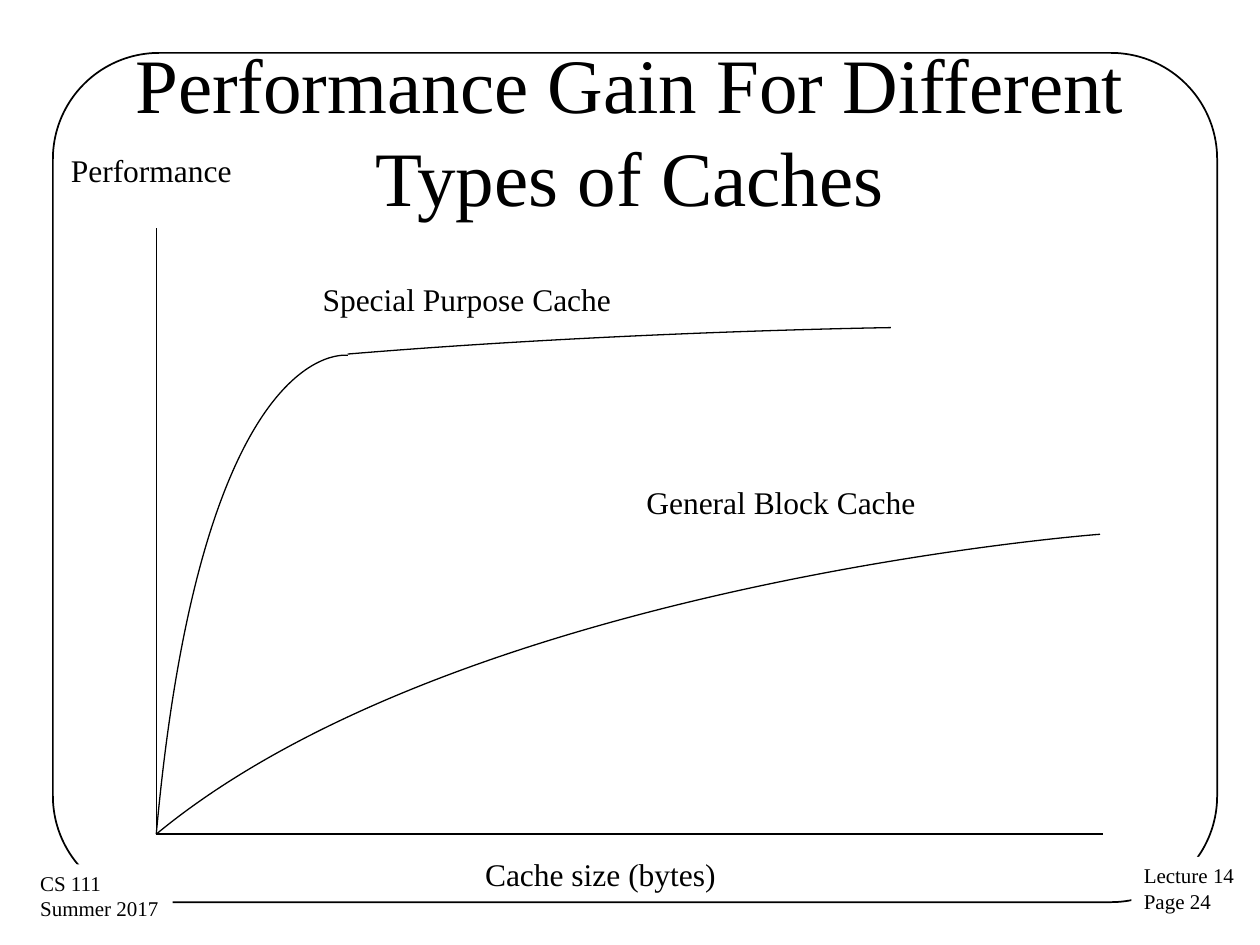
from pptx import Presentation
from pptx.dml.color import RGBColor
from pptx.enum.shapes import MSO_CONNECTOR, MSO_SHAPE
from pptx.enum.text import MSO_ANCHOR, PP_ALIGN
from pptx.oxml.ns import qn
from pptx.util import Inches, Pt
from lxml.etree import SubElement

COLORS = {"ink": "000000", "paper": "FFFFFF"}
ORIGIN = (1.24, 6.62)


class Sketch:
    """Draws styled elements on one slide."""

    font = "Times New Roman"
    thin = 0.75

    def __init__(self, page):
        self.page = page
        self.graph = None

    def color(self, name):
        return RGBColor.from_string(COLORS[name])

    def outline(self, shape, width):
        shape.line.color.rgb = self.color("ink")
        shape.line.width = Pt(width)

    def frame(self, left, top, width, height, corner):
        shape = self.page.shapes.add_shape(
            MSO_SHAPE.ROUNDED_RECTANGLE,
            Inches(left), Inches(top), Inches(width), Inches(height))
        shape.adjustments[0] = corner
        shape.shadow.inherit = False
        shape.fill.background()
        self.outline(shape, 1)

    def text(self, lines, left, top, width, height, size, spacing=None,
             margins=(0, 0), align=PP_ALIGN.LEFT, anchor=MSO_ANCHOR.TOP,
             wrap=False, fill=None):
        box = self.page.shapes.add_textbox(
            Inches(left), Inches(top), Inches(width), Inches(height))
        if fill:
            box.fill.solid()
            box.fill.fore_color.rgb = self.color(fill)
        frame = box.text_frame
        frame.word_wrap = wrap
        frame.vertical_anchor = anchor
        frame.margin_left = frame.margin_right = Inches(margins[0])
        frame.margin_top = frame.margin_bottom = Inches(margins[1])
        frame.text = "\n".join(lines)
        for para in frame.paragraphs:
            para.alignment = align
            para.line_spacing = spacing
            para.font.name = self.font
            para.font.size = Pt(size)
            para.font.color.rgb = self.color("ink")

    def title(self, words):
        self.text([words], 0.5, 0.4, 9, 1.25, 44, margins=(0.1, 0.05),
                  align=PP_ALIGN.CENTER, anchor=MSO_ANCHOR.MIDDLE, wrap=True)

    def footer(self, lines, left, top, width):
        self.text(lines, left, top, width, 0.51, 12, margins=(0.1, 0.05),
                  fill="paper")

    def label(self, words, left, top, width, height=0.38, spacing=0.93):
        self.text([words], left, top, width, height, 18, spacing)

    def start_graph(self):
        self.graph = self.page.shapes.add_group_shape()

    def axis(self, start, end):
        line = self.graph.shapes.add_connector(
            MSO_CONNECTOR.STRAIGHT, *map(Inches, start + end))
        self.outline(line, self.thin)
        SubElement(line._element.spPr, qn("a:effectLst"))

    def curve(self, start, *controls):
        builder = self.graph.shapes.build_freeform(*map(Inches, start))
        builder.add_line_segments(
            [tuple(map(Inches, point)) for point in controls], close=False)
        shape = builder.convert_to_shape()
        outline = next(shape._element.iter(qn("a:path")))
        bezier = SubElement(outline, qn("a:cubicBezTo"))
        for segment in outline.findall(qn("a:lnTo")):
            bezier.append(segment[0])
            outline.remove(segment)
        shape.shadow.inherit = False
        shape.fill.background()
        self.outline(shape, self.thin)


def main():
    deck = Presentation()
    deck.slide_width, deck.slide_height = Inches(10), Inches(7.5)
    sketch = Sketch(deck.slides.add_slide(deck.slide_layouts[6]))

    sketch.frame(0.42, 0.42, 9.24, 6.74, 0.125)
    sketch.footer(["Lecture 14", "Page 24"], 8.98, 6.8, 0.93)
    sketch.footer(["CS 111", "Summer 2017"], 0.22, 6.86, 1.15)
    sketch.title("Performance Gain For Different Types of Caches")

    sketch.start_graph()
    sketch.curve(ORIGIN, (1.6, 2.64), (2.76, 2.82), (2.76, 2.82))
    sketch.axis((1.24, 1.81), (1.24, 6.63))
    sketch.axis((8.75, 6.62), ORIGIN)
    sketch.curve(ORIGIN, (3.66, 4.62), (8.73, 4.24), (8.73, 4.24))
    sketch.curve((2.76, 2.81), (4.92, 2.63), (7.07, 2.6), (7.07, 2.6))

    sketch.label("General Block Cache", 5.13, 3.86, 2.88)
    sketch.label("Special Purpose Cache", 2.56, 2.25, 3.09)
    sketch.label("Cache size (bytes)", 3.85, 6.81, 2.47)
    sketch.label(" Performance", 0.5, 1.22, 1.8, 0.39, 0.95)

    deck.save("out.pptx")


if __name__ == "__main__":
    main()
